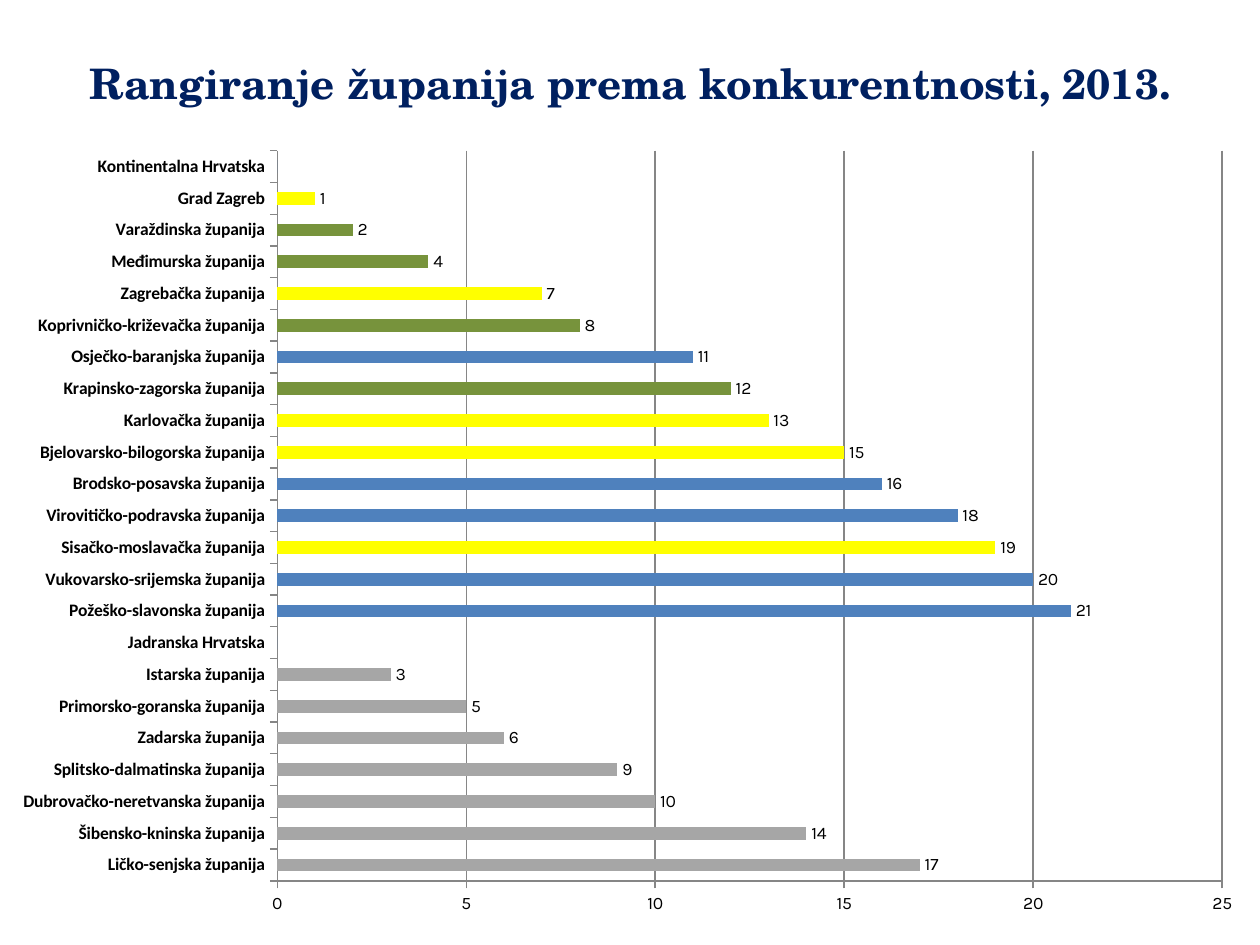
from dataclasses import dataclass

from lxml.etree import SubElement
from pptx import Presentation
from pptx.chart.data import CategoryChartData as ChartData
from pptx.dml.color import RGBColor
from pptx.enum.chart import XL_CHART_TYPE as ChartType
from pptx.enum.chart import XL_LABEL_POSITION as LabelPosition
from pptx.enum.chart import XL_TICK_MARK as TickMark
from pptx.enum.text import MSO_ANCHOR as Anchor
from pptx.enum.text import PP_ALIGN as Align
from pptx.oxml.ns import qn
from pptx.util import Inches, Pt


@dataclass(frozen=True)
class Theme:
    """Colours, fonts and type sizes of the slide."""
    paper: str = "FFFFFF"
    navy: str = "002060"
    ink: str = "000000"
    rule: str = "868686"
    central: str = "FFFF00"
    north: str = "77933C"
    east: str = "4F81BD"
    coast: str = "A6A6A6"
    title_font: str = "TeX Gyre Schola"
    chart_font: str = "Karla"
    category_font: str = "Calibri"
    title_size: int = 24
    chart_size: int = 10


THEME = Theme()
TITLE = "Rangiranje županija prema konkurentnosti, 2013."
RANKING = [
    ("Kontinentalna Hrvatska", 0, None),
    ("Grad Zagreb", 1, THEME.central),
    ("Varaždinska županija", 2, THEME.north),
    ("Međimurska županija", 4, THEME.north),
    ("Zagrebačka županija", 7, THEME.central),
    ("Koprivničko-križevačka županija", 8, THEME.north),
    ("Osječko-baranjska županija", 11, THEME.east),
    ("Krapinsko-zagorska županija", 12, THEME.north),
    ("Karlovačka županija", 13, THEME.central),
    ("Bjelovarsko-bilogorska županija", 15, THEME.central),
    ("Brodsko-posavska županija", 16, THEME.east),
    ("Virovitičko-podravska županija", 18, THEME.east),
    ("Sisačko-moslavačka županija", 19, THEME.central),
    ("Vukovarsko-srijemska županija", 20, THEME.east),
    ("Požeško-slavonska županija", 21, THEME.east),
    ("Jadranska Hrvatska", 0, None),
    ("Istarska županija", 3, THEME.coast),
    ("Primorsko-goranska županija", 5, THEME.coast),
    ("Zadarska županija", 6, THEME.coast),
    ("Splitsko-dalmatinska županija", 9, THEME.coast),
    ("Dubrovačko-neretvanska županija", 10, THEME.coast),
    ("Šibensko-kninska županija", 14, THEME.coast),
    ("Ličko-senjska županija", 17, THEME.coast),
]


def apply(target, **values):
    """Set each given attribute on the target."""
    for name, value in values.items():
        setattr(target, name, value)


def style_font(font, family, size, colour, bold=False):
    """Give a font its family, size, colour and weight."""
    apply(font, name=family, size=Pt(size), bold=bold)
    font.color.rgb = RGBColor.from_string(colour)


def paint(fill, colour):
    """Make a fill solid in one colour."""
    fill.solid()
    fill.fore_color.rgb = RGBColor.from_string(colour)


def place_title(page, box):
    """Put the heading in the title placeholder."""
    title = page.shapes.title
    apply(title, **dict(zip(("left", "top", "width", "height"), box)))
    paint(title.fill, THEME.paper)
    apply(title.text_frame, text=TITLE, word_wrap=True,
          vertical_anchor=Anchor.MIDDLE)
    para = title.text_frame.paragraphs[0]
    para.alignment = Align.CENTER
    style_font(para.runs[0].font, THEME.title_font, THEME.title_size,
               THEME.navy, True)


def fix_plot_area(chart, **fractions):
    """Fix the inner plot area as fractions of the chart."""
    plot_area = chart.element.find(".//" + qn("c:plotArea"))
    layout = plot_area.find(qn("c:layout"))
    if layout is None:
        layout = SubElement(plot_area, qn("c:layout"))
        plot_area.insert(0, layout)
    manual = SubElement(layout, qn("c:manualLayout"))
    settings = {"layoutTarget": "inner", "xMode": "edge", "yMode": "edge",
                **fractions}
    for name, value in settings.items():
        SubElement(manual, qn("c:" + name)).set("val", str(value))


def style_axes(chart):
    """Format both axes and the gridlines."""
    categories, values = chart.category_axis, chart.value_axis
    apply(values, minimum_scale=0, maximum_scale=25, major_unit=5,
          has_major_gridlines=True)
    for axis in (categories, values):
        apply(axis, major_tick_mark=TickMark.OUTSIDE,
              minor_tick_mark=TickMark.NONE)
    for line in (categories.format.line, values.format.line,
                 values.major_gridlines.format.line):
        line.width = Pt(0.75)
        line.color.rgb = RGBColor.from_string(THEME.rule)
    style_font(categories.tick_labels.font, THEME.category_font,
               THEME.chart_size, THEME.ink, True)
    style_font(values.tick_labels.font, THEME.chart_font,
               THEME.chart_size, THEME.ink)


def place_ranking(page, box):
    """Draw the ranking as bars coloured by region."""
    rows = RANKING[::-1]
    data = ChartData()
    data.categories = [county for county, _, _ in rows]
    data.add_series("Series 1", [rank for _, rank, _ in rows])
    chart = page.shapes.add_chart(ChartType.BAR_CLUSTERED, *box, data).chart
    apply(chart, has_legend=False, has_title=False)
    style_font(chart.font, THEME.chart_font, THEME.chart_size, THEME.ink)
    fix_plot_area(chart, x=0.22, y=0.02, w=0.75, h=0.92)
    style_axes(chart)
    plot = chart.plots[0]
    apply(plot, gap_width=150, vary_by_categories=False, has_data_labels=True)
    apply(plot.data_labels, show_value=True, number_format="0;;;",
          number_format_is_linked=False, position=LabelPosition.OUTSIDE_END)
    style_font(plot.data_labels.font, THEME.chart_font, THEME.chart_size,
               THEME.ink)
    series = plot.series[0]
    paint(series.format.fill, THEME.east)
    for index, (_, _, colour) in enumerate(rows):
        if colour:
            paint(series.points[index].format.fill, colour)


def main():
    """Build the deck and save it."""
    deck = Presentation()
    apply(deck, slide_width=Inches(10), slide_height=Inches(7.5))
    page = deck.slides.add_slide(deck.slide_layouts[5])
    place_title(page, (0, 0, Inches(10), Inches(1.31)))
    place_ranking(page, (0, Inches(1.07), Inches(10), Inches(6.3)))
    deck.save("out.pptx")


if __name__ == "__main__":
    main()
